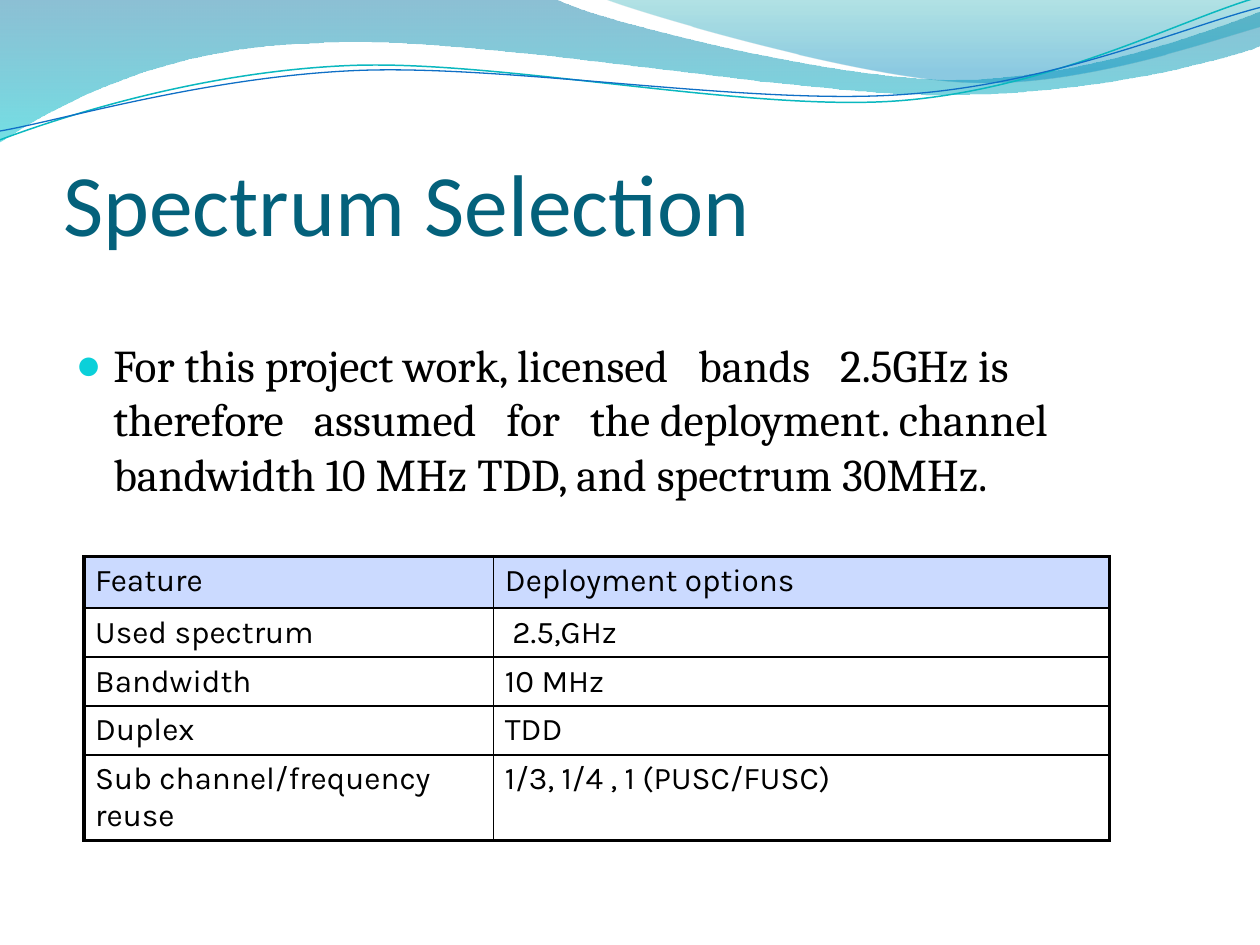
"""Build the Spectrum Selection slide."""
from itertools import chain
from math import cos, radians, sin
from lxml.etree import SubElement
from pptx import Presentation
from pptx.dml.color import RGBColor as RGB
from pptx.enum.text import MSO_ANCHOR as ANCHOR, MSO_AUTO_SIZE as AUTO, PP_ALIGN as ALIGN
from pptx.oxml import parse_xml
from pptx.oxml.ns import nsdecls, qn
from pptx.util import Cm, Pt

COLORS = {
    "title": "04617B", "text": "000000", "bullet": "0BD0D9", "header": "CBDAFF",
    "blue": "0074A1", "cyan": "00C6CF", "teal": "00A1A9", "sky": "008BBF",
    "teal_line": "0AB8BF", "blue_line": "0F6FC6",
}
PER_INCH = 2.54
TILT = -2.7
BODY = ("For this project work, licensed   bands   2.5GHz is therefore   assumed   for   "
        "the deployment. channel bandwidth 10 MHz TDD, and spectrum 30MHz.")
ROWS = [
    ("Feature", "Deployment options"),
    ("Used spectrum", " 2.5,GHz"),
    ("Bandwidth", "10 MHz"),
    ("Duplex", "TDD"),
    ("Sub channel/frequency reuse", "1/3, 1/4 , 1 (PUSC/FUSC)"),
]
COL_WIDTHS = (8.26, 12.42)
ROW_HEIGHTS = (1.04, 0.97, 0.97, 0.97, 1.19)

LEFT_WAVE = [
    [(0, 0)], [(4.4, -0.01)],
    [(4.76, 0.17), (6.64, 0.63), (7.58, 0.63)],
    [(8.53, 0.63), (9.58, 0.26), (10, 0.09)], [(10.01, 0.36)],
    [(9.83, 0.44), (8.7, 0.76), (7.46, 0.75)],
    [(6.22, 0.75), (3.82, 0.28), (2.57, 0.34)],
    [(1.29, 0.36), (0.46, 0.83), (-0.01, 1.13)], [(0, 0)],
]
RIGHT_WAVE = [
    [(4.79, -0.01)],
    [(5.09, 0.11), (6.82, 0.62), (7.69, 0.65)],
    [(8.56, 0.69), (9.61, 0.32), (10, 0.21)], [(10, 0)], [(4.79, -0.01)],
]
TEAL_CURVE = [
    [(0, 1.11)],
    [(0.48, 0.93), (1.58, 0.57), (2.77, 0.52)],
    [(3.95, 0.47), (5.93, 0.89), (7.13, 0.8)],
    [(8.33, 0.71), (9.38, 0.15), (9.98, -0.02)],
]
BLUE_CURVE = [
    [(0, 1.04)],
    [(0.47, 0.96), (1.64, 0.61), (2.83, 0.56)],
    [(4.03, 0.51), (5.97, 0.84), (7.17, 0.75)],
    [(8.36, 0.67), (9.41, 0.21), (10, 0.06)],
]


def rgb(name):
    return RGB.from_string(COLORS[name])


def turn(segments, center, degrees):
    cx, cy = center
    c, d = cos(radians(degrees)), sin(radians(degrees))
    return [[(cx + (x - cx) * c - (y - cy) * d, cy + (x - cx) * d + (y - cy) * c)
             for x, y in seg] for seg in segments]


def add_path(s, segments, close):
    start, *rest = [(Cm(x * PER_INCH), Cm(y * PER_INCH))
                    for x, y in chain.from_iterable(segments)]
    builder = s.shapes.build_freeform(*start)
    builder.add_line_segments(rest, close=close)
    sp = builder.convert_to_shape()
    sp.shadow.inherit = False
    lines = iter(list(sp._element.iter(qn("a:lnTo"))))
    for seg in segments[1:]:
        parts = [next(lines) for _ in seg]
        if len(parts) == 3:
            curve = parse_xml(f'<a:cubicBezTo {nsdecls("a")}/>')
            parts[0].addprevious(curve)
            for part in parts:
                curve.append(part[0])
                part.getparent().remove(part)
    return sp


def add_wave(s, segments, stops):
    sp = add_path(s, segments, True)
    sp.line.fill.background()
    sp.fill.gradient()
    sp.fill.gradient_angle = 270
    for stop, (position, color, _) in zip(sp.fill.gradient_stops, stops):
        stop.position = position
        stop.color.rgb = rgb(color)
    for clr, (_, _, opacity) in zip(sp._element.iter(qn("a:srgbClr")), stops):
        SubElement(clr, qn("a:alpha"), val=str(opacity * 1000))


def add_curve(s, segments, center, color, width):
    sp = add_path(s, turn(segments, center, -TILT), False)
    sp.rotation = TILT
    sp.fill.background()
    sp.line.color.rgb = rgb(color)
    sp.line.width = Pt(width)


def style(p, font, size, color):
    for r in p.runs:
        r.font.name, r.font.size = font, Pt(size)
        r.font.color.rgb = rgb(color)


def fill_placeholder(s, sp, box, text, font, size, color):
    sp.left, sp.top, sp.width, sp.height = map(Cm, box)
    s.shapes._spTree.append(sp._element)
    tf = sp.text_frame
    tf.text = text
    tf.word_wrap, tf.auto_size = True, AUTO.NONE
    p = tf.paragraphs[0]
    p.alignment = ALIGN.LEFT
    style(p, font, size, color)
    return tf


def add_bullet(p):
    p.space_before = Pt(5)
    pPr = p._p.get_or_add_pPr()
    pPr.set("marL", str(Cm(0.76)))
    pPr.set("indent", str(Cm(-0.76)))
    SubElement(SubElement(pPr, qn("a:buClr")), qn("a:srgbClr"), val=COLORS["bullet"])
    SubElement(pPr, qn("a:buSzPct"), val="95000")
    SubElement(pPr, qn("a:buChar"), char="●")


def set_borders(cell, widths):
    tcPr = cell._tc.get_or_add_tcPr()
    for i, (side, width) in enumerate(zip("LRTB", widths)):
        tcPr.insert(i, parse_xml(
            f'<a:ln{side} {nsdecls("a")} w="{Pt(width)}"><a:solidFill>'
            f'<a:srgbClr val="{COLORS["text"]}"/></a:solidFill></a:ln{side}>'))


def add_options_table(s):
    n_rows, n_cols = len(ROWS), len(COL_WIDTHS)
    frame = s.shapes.add_table(n_rows, n_cols, Cm(1.69), Cm(11.22),
                               Cm(sum(COL_WIDTHS)), Cm(sum(ROW_HEIGHTS)))
    table = frame.table
    table.first_row = table.horz_banding = False
    for col, width in zip(table.columns, COL_WIDTHS):
        col.width = Cm(width)
    for i, (row, height) in enumerate(zip(table.rows, ROW_HEIGHTS)):
        row.height = Cm(height)
        for j, cell in enumerate(row.cells):
            cell.text = ROWS[i][j]
            cell.margin_left = cell.margin_right = Cm(0.23)
            cell.margin_top = cell.margin_bottom = Cm(0.12)
            style(cell.text_frame.paragraphs[0], "Karla", 18, "text")
            if i == 0:
                cell.fill.solid()
                cell.fill.fore_color.rgb = rgb("header")
            else:
                cell.fill.background()
            outer = (j == 0, j == n_cols - 1, i == 0, i == n_rows - 1)
            set_borders(cell, [2.25 if edge else 1 for edge in outer])


def main():
    prs = Presentation()
    prs.slide_width, prs.slide_height = Cm(25.4), Cm(19.05)
    s = prs.slides.add_slide(prs.slide_layouts[1])
    add_wave(s, LEFT_WAVE, [(0, "blue", 45), (1, "cyan", 55)])
    add_wave(s, RIGHT_WAVE, [(0, "teal", 30), (0.8, "sky", 45)])
    add_curve(s, TEAL_CURVE, (4.99, 0.58), "teal_line", 0.85)
    add_curve(s, BLUE_CURVE, (5, 0.59), "blue_line", 0.75)
    title, body = s.placeholders
    tf = fill_placeholder(s, title, (1.27, 1.95, 22.86, 3.18),
                          "Spectrum Selection", "Calibri", 50, "title")
    tf.vertical_anchor = ANCHOR.BOTTOM
    tf.margin_left = tf.margin_right = tf.margin_bottom = 0
    tf = fill_placeholder(s, body, (1.27, 5.38, 22.86, 12.19), BODY, "Cambria", 26, "text")
    tf.margin_top = Cm(1.41)
    add_bullet(tf.paragraphs[0])
    add_options_table(s)
    prs.save("out.pptx")


if __name__ == "__main__":
    main()
